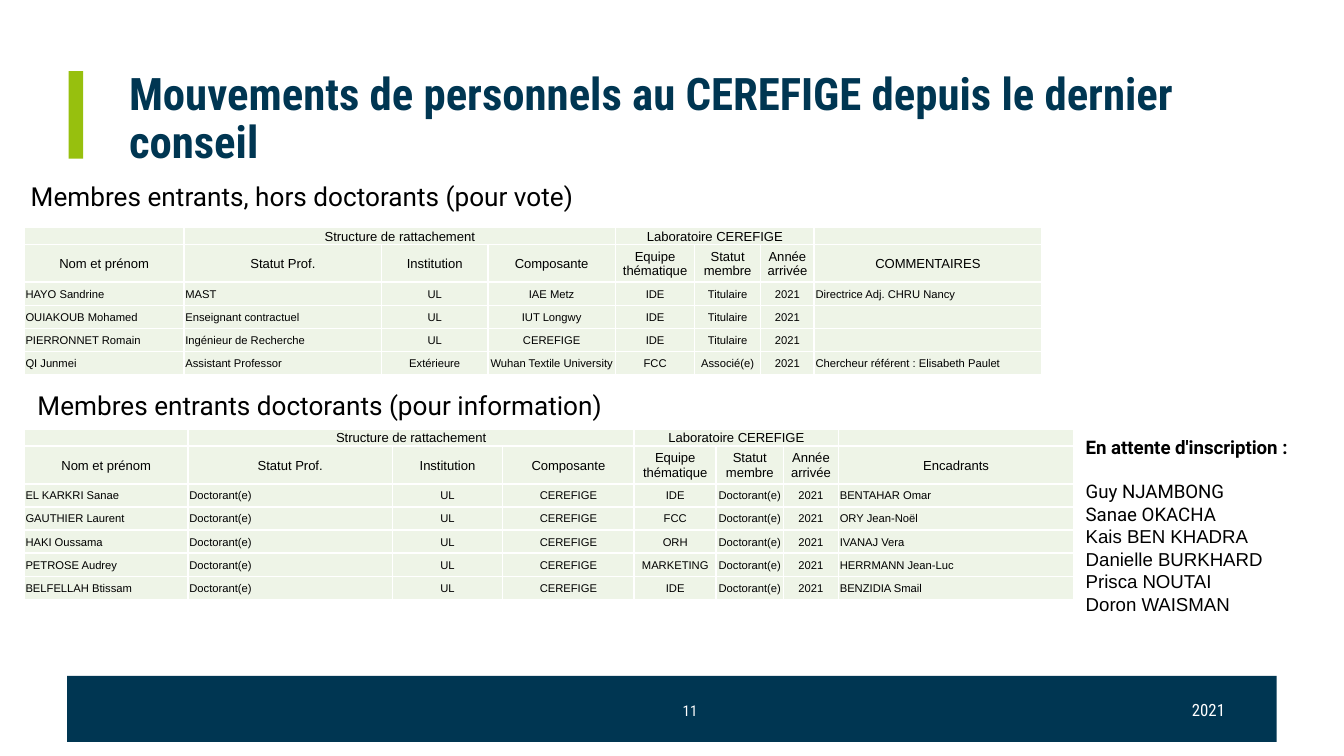
"""Builds the slide on staff movements at CEREFIGE."""
from dataclasses import dataclass

from lxml.etree import SubElement
from pptx import Presentation
from pptx.dml.color import RGBColor
from pptx.enum.shapes import MSO_SHAPE as Preset
from pptx.enum.text import MSO_ANCHOR as Anchor, MSO_AUTO_SIZE as AutoSize, PP_ALIGN as Align
from pptx.oxml.ns import qn
from pptx.slide import Slide
from pptx.table import _Cell as Cell
from pptx.text.text import Font, TextFrame
from pptx.util import Inches, Length, Pt

NAVY, GREEN, PALE, WHITE, BLACK = "003652", "97C00E", "EEF4E7", "FFFFFF", "000000"
BODY_FONT, TITLE_FONT, TABLE_FONT = "Roboto", "Roboto Condensed", "Arial"
GROUP_HEIGHT, HEADER_HEIGHT, ROW_HEIGHT = Inches(0.13), Inches(0.28), Pt(12.4)
GROUPS = {1: "Structure de rattachement", 4: "Laboratoire CEREFIGE"}
GROUP_SPAN = 3
HEADERS = ["Nom et prénom", "Statut Prof.", "Institution", "Composante",
           "Equipe thématique", "Statut membre", "Année\varrivée"]
LEFT_COLUMNS = {0, 1, 7}


@dataclass
class Box:
    """A rectangle on the slide, in inches."""
    left: float
    top: float
    width: float
    height: float

    def lengths(self) -> tuple[Length, ...]:
        """Returns the position and size as lengths."""
        return tuple(map(Inches, (self.left, self.top, self.width, self.height)))


@dataclass
class Style:
    """The look of a piece of text."""
    size: float
    name: str
    color: str = BLACK
    bold: bool = False


@dataclass
class Label:
    """A one-paragraph text box."""
    text: str
    box: Box
    style: Style
    align: Align = Align.LEFT
    anchor: Anchor = Anchor.TOP


@dataclass
class MemberTable:
    """A table of incoming members."""
    box: Box
    widths: list[float]
    last_header: str
    members: list[list[str]]


BARS = [(Box(0.5, 5.03, 9, 0.49), NAVY), (Box(0.51, 0.53, 0.11, 0.65), GREEN)]

LABELS = [
    Label("11", Box(4.77, 5.14, 0.73, 0.3), Style(8, TITLE_FONT, WHITE), Align.CENTER, Anchor.MIDDLE),
    Label("2021", Box(8.77, 5.16, 1.62, 0.3), Style(9, TITLE_FONT, WHITE)),
    Label("Membres entrants, hors doctorants (pour vote)", Box(0.13, 1.29, 8.71, 0.34), Style(14, BODY_FONT)),
    Label("Membres entrants doctorants (pour information)", Box(0.18, 2.85, 8.71, 0.34), Style(14, BODY_FONT)),
]

DOCTORAL_MEMBERS = [
    ("EL KARKRI Sanae", "IDE", "BENTAHAR Omar"),
    ("GAUTHIER Laurent", "FCC", "ORY Jean-Noël"),
    ("HAKI Oussama", "ORH", "IVANAJ Vera"),
    ("PETROSE Audrey", "MARKETING", "HERRMANN Jean-Luc"),
    ("BELFELLAH Btissam", "IDE", "BENZIDIA Smail"),
]

TABLES = [
    MemberTable(Box(0.18, 1.69, 7.57, 1.14), [1.19, 1.47, 0.79, 0.95, 0.59, 0.49, 0.4, 1.69], "COMMENTAIRES", [
        ["HAYO Sandrine", "MAST", "UL", "IAE Metz", "IDE", "Titulaire", "2021", "Directrice Adj. CHRU Nancy"],
        ["OUIAKOUB Mohamed", "Enseignant contractuel", "UL", "IUT Longwy", "IDE", "Titulaire", "2021", ""],
        ["PIERRONNET Romain", "Ingénieur de Recherche", "UL", "CEREFIGE", "IDE", "Titulaire", "2021", ""],
        ["QI Junmei", "Assistant Professor", "Extérieure", "Wuhan Textile University", "FCC",
         "Associé(e)", "2021", "Chercheur référent : Elisabeth Paulet"],
    ]),
    MemberTable(Box(0.18, 3.19, 7.81, 1.45), [1.22, 1.52, 0.82, 0.98, 0.61, 0.5, 0.41, 1.75], "Encadrants", [
        [name, "Doctorant(e)", "UL", "CEREFIGE", team, "Doctorant(e)", "2021", supervisor]
        for name, team, supervisor in DOCTORAL_MEMBERS
    ]),
]

WAITING_BOX = Box(7.98, 3.19, 2.21, 1.45)
WAITING_LINES = [
    ("En attente d'inscription :", Style(10, BODY_FONT, bold=True)),
    ("Guy NJAMBONG", Style(10, BODY_FONT)),
    ("Sanae OKACHA", Style(10, BODY_FONT)),
    *[(name, Style(10, TABLE_FONT))
      for name in ("Kais BEN KHADRA", "Danielle BURKHARD", "Prisca NOUTAI", "Doron WAISMAN")],
]


def rgb(color: str) -> RGBColor:
    """Turns a hex string into a colour."""
    return RGBColor.from_string(color)


def apply_style(font: Font, style: Style) -> None:
    """Applies a text style to a font."""
    font.size = Pt(style.size)
    font.name = style.name
    font.bold = style.bold
    font.color.rgb = rgb(style.color)


def add_bar(slide: Slide, box: Box, color: str) -> None:
    """Draws a plain coloured rectangle."""
    bar = slide.shapes.add_shape(Preset.RECTANGLE, *box.lengths())
    bar.shadow.inherit = False
    bar.fill.solid()
    bar.fill.fore_color.rgb = rgb(color)
    bar.line.fill.background()


def add_text_frame(slide: Slide, box: Box) -> TextFrame:
    """Adds a wrapping text box and returns its frame."""
    text_frame = slide.shapes.add_textbox(*box.lengths()).text_frame
    text_frame.word_wrap = True
    return text_frame


def add_label(slide: Slide, label: Label) -> None:
    """Draws a text box with a single paragraph."""
    text_frame = add_text_frame(slide, label.box)
    text_frame.text = label.text
    text_frame.vertical_anchor = label.anchor
    paragraph = text_frame.paragraphs[0]
    paragraph.alignment = label.align
    apply_style(paragraph.runs[0].font, label.style)


def add_waiting_list(slide: Slide) -> None:
    """Draws the list of people awaiting registration."""
    text_frame = add_text_frame(slide, WAITING_BOX)
    text_frame.text = "\n".join(text for text, _ in WAITING_LINES)
    for paragraph, (_, style) in zip(text_frame.paragraphs, WAITING_LINES):
        apply_style(paragraph.runs[0].font, style)
    text_frame.paragraphs[1].space_before = Pt(12)


def set_title(slide: Slide, text: str, box: Box) -> None:
    """Fills and places the title placeholder."""
    title = slide.shapes.title
    title.left, title.top, title.width, title.height = box.lengths()
    text_frame = title.text_frame
    text_frame.text = text
    text_frame.word_wrap = True
    text_frame.auto_size = AutoSize.NONE
    text_frame.vertical_anchor = Anchor.MIDDLE
    text_frame.margin_top = text_frame.margin_bottom = Inches(0.1)
    paragraph = text_frame.paragraphs[0]
    paragraph.alignment = Align.LEFT
    paragraph.line_spacing = 0.9
    apply_style(paragraph.runs[0].font, Style(24, TITLE_FONT, NAVY, True))


def format_cell(cell: Cell, text: str, size: int, align: Align) -> None:
    """Fills a cell with text, white borders and a pale background."""
    cell.text = text
    cell.vertical_anchor = Anchor.MIDDLE
    cell.margin_left = cell.margin_right = cell.margin_top = Inches(0.01)
    cell.margin_bottom = 0
    paragraph = cell.text_frame.paragraphs[0]
    paragraph.alignment = align
    for run in paragraph.runs:
        apply_style(run.font, Style(size, TABLE_FONT))
    if not text:
        SubElement(paragraph._p, qn("a:endParaRPr"), sz=str(size * 100))
    properties = cell._tc.get_or_add_tcPr()
    for side in ("a:lnL", "a:lnR", "a:lnT", "a:lnB"):
        border = SubElement(properties, qn(side), w=str(Pt(1)))
        SubElement(SubElement(border, qn("a:solidFill")), qn("a:srgbClr"), val=WHITE)
    cell.fill.solid()
    cell.fill.fore_color.rgb = rgb(PALE)


def add_member_table(slide: Slide, members: MemberTable) -> None:
    """Draws a member table with its two header rows."""
    groups = [GROUPS.get(column, "") for column in range(len(members.widths))]
    rows = [groups, [*HEADERS, members.last_header], *members.members]
    heights = [GROUP_HEIGHT, HEADER_HEIGHT] + [ROW_HEIGHT] * len(members.members)
    frame = slide.shapes.add_table(len(rows), len(groups), *members.box.lengths())
    table = frame.table
    table.first_row = table.horz_banding = False
    for column, width in zip(table.columns, members.widths):
        column.width = Inches(width)
    for row_index, (values, height) in enumerate(zip(rows, heights)):
        table.rows[row_index].height = height
        is_header = row_index < 2
        for column_index, text in enumerate(values):
            is_left = not is_header and column_index in LEFT_COLUMNS
            format_cell(table.cell(row_index, column_index), text, 7 if is_header else 6,
                        Align.LEFT if is_left else Align.CENTER)
    for start in GROUPS:
        table.cell(0, start).merge(table.cell(0, start + GROUP_SPAN - 1))
    frame.left, frame.top, frame.width, frame.height = members.box.lengths()


def main() -> None:
    """Builds and saves the presentation."""
    presentation = Presentation()
    presentation.slide_width = Inches(10)
    presentation.slide_height = presentation.slide_width * 9 // 16
    slide = presentation.slides.add_slide(presentation.slide_layouts[5])
    for box, color in BARS:
        add_bar(slide, box, color)
    set_title(slide, "Mouvements de personnels au CEREFIGE depuis le dernier conseil", Box(0.86, 0.57, 8.9, 0.65))
    for members in TABLES:
        add_member_table(slide, members)
    for label in LABELS:
        add_label(slide, label)
    add_waiting_list(slide)
    presentation.save("out.pptx")


if __name__ == "__main__":
    main()
